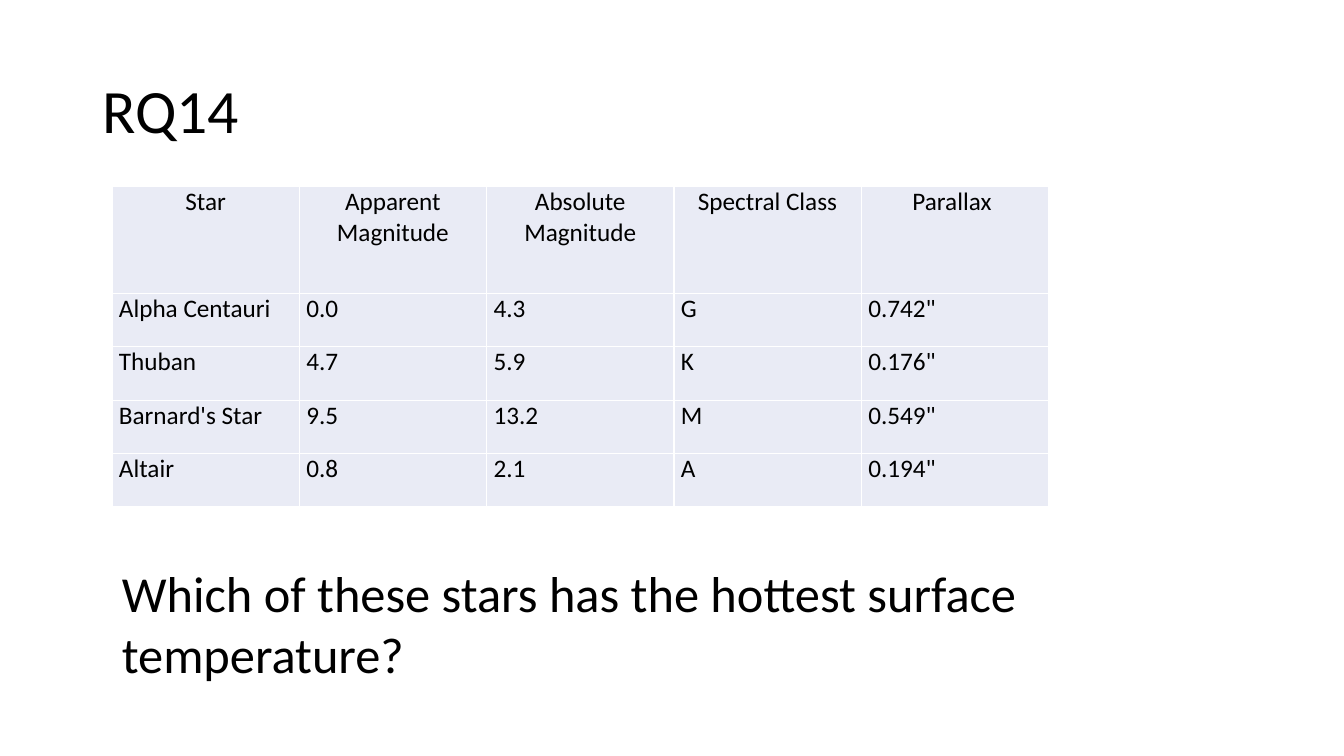
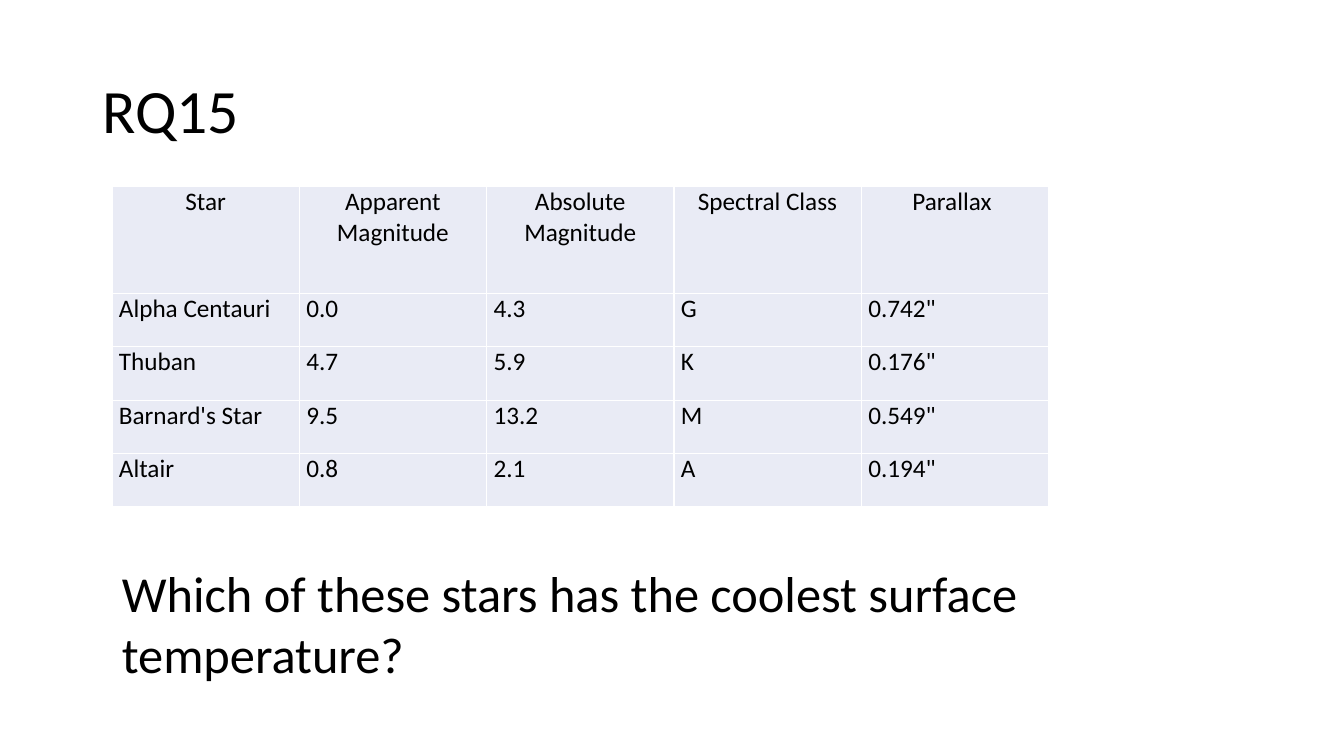
from dataclasses import dataclass

from lxml.etree import SubElement
from pptx import Presentation
from pptx.dml.color import RGBColor
from pptx.enum.text import MSO_ANCHOR, PP_ALIGN
from pptx.oxml.ns import qn
from pptx.slide import Slide
from pptx.table import _Cell
from pptx.util import Inches, Pt

WIDE, HIGH = Inches(13.33), Inches(7.5)
FONT = "Calibri"
INK, PALE, WHITE = "000000", "E9EBF5", "FFFFFF"
COL, ROW = 13.94, 7.07
HEAD = 2

STARS = [
    ("Star", "Apparent Magnitude", "Absolute Magnitude", "Spectral Class", "Parallax "),
    ("Alpha Centauri", "0.0", "4.3", "G", '0.742"'),
    ("Thuban", "4.7", "5.9", "K", '0.176"'),
    ("Barnard's Star", "9.5", "13.2", "M", '0.549"'),
    ("Altair", "0.8", "2.1", "A", '0.194"'),
]


@dataclass(frozen=True)
class Box:
    left: float
    top: float
    width: float
    height: float

    def place(self) -> tuple[int, int, int, int]:
        return across(self.left), down(self.top), across(self.width), down(self.height)


@dataclass(frozen=True)
class Style:
    box: Box
    size: int
    anchor: MSO_ANCHOR
    space: float


@dataclass(frozen=True)
class Quiz:
    title: str
    ask: str


TITLE = Style(Box(6.88, 5.33, 86.25, 19.33), 44, MSO_ANCHOR.MIDDLE, 0.9)
ASK = Style(Box(8.33, 73.73, 72.7, 17.47), 36, MSO_ANCHOR.TOP, 1.0)
GRID = Box(8.33, 24.67, COL * len(STARS[0]), ROW * (len(STARS) - 1 + HEAD))

QUIZZES = [
    Quiz("RQ14", "Which of these stars has the hottest surface temperature?"),
    Quiz("RQ15", "Which of these stars has the coolest surface temperature?"),
]


def across(share: float) -> int:
    return round(WIDE * share / 100)


def down(share: float) -> int:
    return round(HIGH * share / 100)


def paint(code: str) -> RGBColor:
    return RGBColor.from_string(code)


def write(para, text: str, size: int) -> None:
    para.text = text
    font = para.font
    font.name, font.size = FONT, Pt(size)
    font.color.rgb = paint(INK)


def add_text(slide: Slide, text: str, style: Style) -> None:
    frame = slide.shapes.add_textbox(*style.box.place()).text_frame
    frame.word_wrap = True
    frame.vertical_anchor = style.anchor
    para = frame.paragraphs[0]
    write(para, text, style.size)
    para.line_spacing = style.space


def add_edges(cell: _Cell) -> None:
    props = cell._tc.get_or_add_tcPr()
    for side in ("lnL", "lnR", "lnT", "lnB"):
        line = SubElement(props, qn(f"a:{side}"), w=str(Pt(1)))
        fill = SubElement(line, qn("a:solidFill"))
        SubElement(fill, qn("a:srgbClr"), val=WHITE)


def fill_cell(cell: _Cell, text: str, align: PP_ALIGN) -> None:
    add_edges(cell)
    cell.fill.solid()
    cell.fill.fore_color.rgb = paint(PALE)
    cell.margin_left = cell.margin_right = Inches(0.07)
    cell.margin_top = cell.margin_bottom = 0
    para = cell.text_frame.paragraphs[0]
    write(para, text, 18)
    para.alignment = align


def add_stars(slide: Slide) -> None:
    frame = slide.shapes.add_table(len(STARS), len(STARS[0]), *GRID.place())
    table = frame.table
    table.first_row = table.horz_banding = False
    for col in table.columns:
        col.width = across(COL)
    for i, texts in enumerate(STARS):
        table.rows[i].height = down(ROW * (1 if i else HEAD))
        align = PP_ALIGN.LEFT if i else PP_ALIGN.CENTER
        for j, text in enumerate(texts):
            fill_cell(table.cell(i, j), text, align)


def main() -> None:
    deck = Presentation()
    deck.slide_width, deck.slide_height = WIDE, HIGH
    for quiz in QUIZZES:
        slide = deck.slides.add_slide(deck.slide_layouts[6])
        add_text(slide, quiz.title, TITLE)
        add_stars(slide)
        add_text(slide, quiz.ask, ASK)
    deck.save("out.pptx")


if __name__ == "__main__":
    main()
